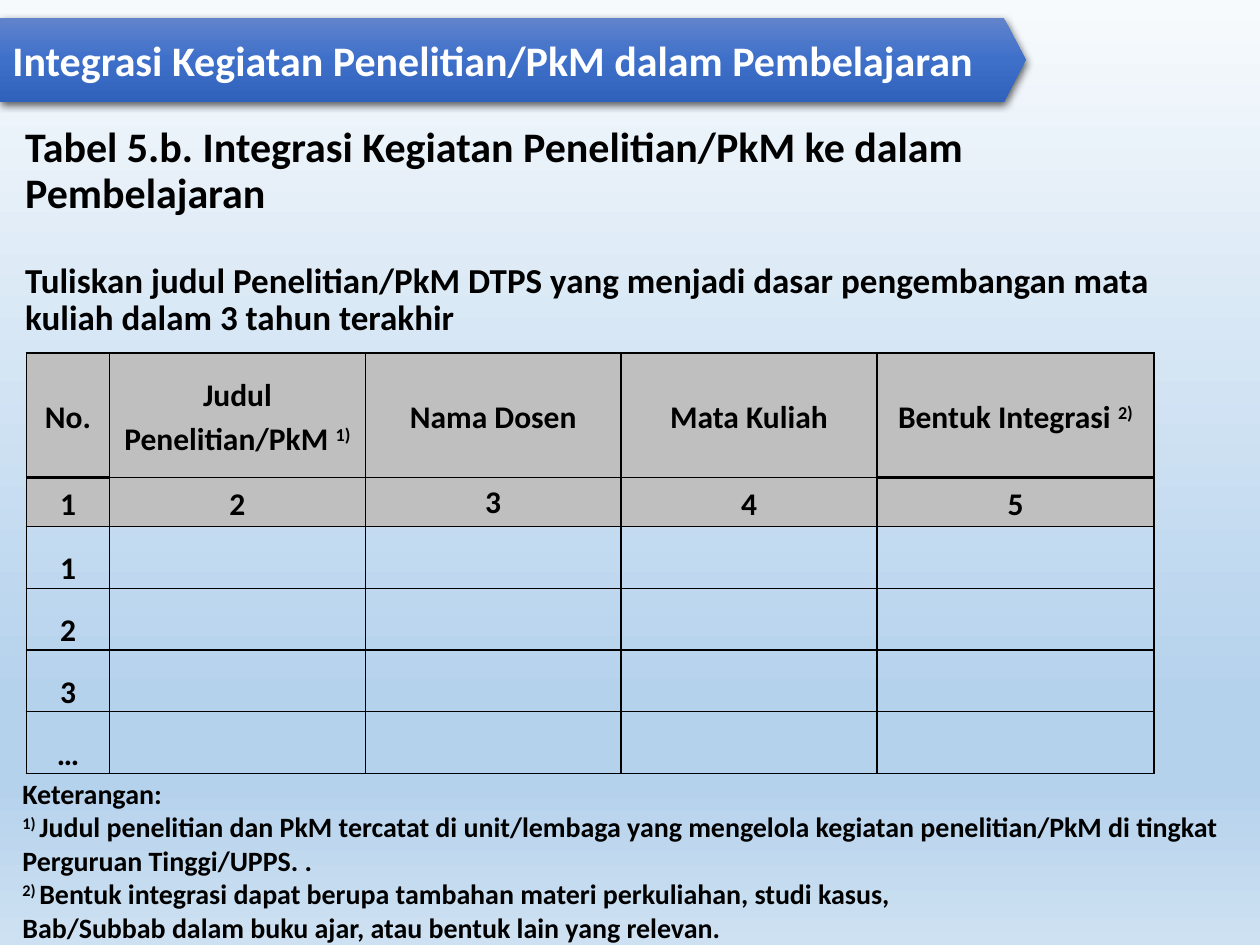
from lxml.etree import SubElement
from pptx import Presentation
from pptx.dml.color import RGBColor
from pptx.enum.shapes import MSO_SHAPE
from pptx.enum.text import MSO_ANCHOR, MSO_AUTO_SIZE, PP_ALIGN
from pptx.oxml.ns import qn
from pptx.util import Inches, Pt

COLUMN_WIDTHS = [0.66, 2.03, 2.03, 2.03, 2.2]
ROW_HEIGHTS = [0.99, 0.39, 0.49, 0.49, 0.49, 0.49]
ROWS = [
    [("No.", ""), ("Judul Penelitian/PkM ", "1)"), ("Nama Dosen", ""),
     ("Mata Kuliah", ""), ("Bentuk Integrasi ", "2)")],
    [(number, "") for number in "12345"],
    [("1", "")],
    [("2", "")],
    [("3", "")],
    [("…", "")],
]
NOTES = [
    ("", "Keterangan:"),
    ("1) ", "Judul penelitian dan PkM tercatat di unit/lembaga yang mengelola "
            "kegiatan penelitian/PkM di tingkat Perguruan Tinggi/UPPS. ."),
    ("2) ", "Bentuk integrasi dapat berupa tambahan materi perkuliahan, studi kasus,"),
    ("", "Bab/Subbab dalam buku ajar, atau bentuk lain yang relevan."),
]


def color(value):
    return RGBColor.from_string(value)


def style(para, size, value="000000"):
    para.font.name = "Calibri"
    para.font.size = Pt(size)
    para.font.bold = True
    para.font.color.rgb = color(value)


def add_span(para, text, raised=False):
    if not text:
        return
    span = para.add_run()
    span.text = text
    if raised:
        span._r.get_or_add_rPr().set("baseline", "30000")


def set_gradient(fill, element, stops):
    fill.gradient()
    fill.gradient_angle = 270
    stop_list = element.find(".//" + qn("a:gsLst"))
    stop_list.clear()
    for position, value in stops:
        stop = SubElement(stop_list, qn("a:gs"), pos=str(position * 1000))
        SubElement(stop, qn("a:srgbClr"), val=value)


def place(shape, box):
    shape.left, shape.top, shape.width, shape.height = map(Inches, box)


def add_shadow(shape):
    shape.shadow.inherit = False
    effects = shape.element.spPr.find(qn("a:effectLst"))
    shadow = SubElement(effects, qn("a:outerShdw"), blurRad=str(Pt(4.5)),
                        dist=str(Pt(1.5)), dir="5400000", rotWithShape="0")
    black = SubElement(shadow, qn("a:srgbClr"), val="000000")
    SubElement(black, qn("a:alpha"), val="63000")


def add_banner(page, box):
    banner = page.shapes.add_shape(MSO_SHAPE.PENTAGON, *map(Inches, box))
    banner.adjustments[0] = 0.26
    set_gradient(banner.fill, banner.element,
                 [(0, "6183CB"), (50, "3E70CA"), (100, "3062BB")])
    banner.line.fill.background()
    add_shadow(banner)
    frame = banner.text_frame
    frame.vertical_anchor = MSO_ANCHOR.MIDDLE
    para = frame.paragraphs[0]
    para.text = "Integrasi Kegiatan Penelitian/PkM dalam Pembelajaran"
    para.alignment = PP_ALIGN.LEFT
    style(para, 24, "FFFFFF")


def fill_title(page, box):
    title = page.shapes.title
    place(title, box)
    frame = title.text_frame
    frame.word_wrap = True
    frame.auto_size = MSO_AUTO_SIZE.NONE
    frame.vertical_anchor = MSO_ANCHOR.MIDDLE
    heading = frame.paragraphs[0]
    heading.text = "Tabel 5.b. Integrasi Kegiatan Penelitian/PkM ke dalam Pembelajaran"
    instruction = frame.add_paragraph()
    instruction.text = ("Tuliskan judul Penelitian/PkM DTPS yang menjadi dasar "
                        "pengembangan mata kuliah dalam 3 tahun terakhir")
    for para, size, gap in [(heading, 24, 0), (instruction, 20, 26)]:
        para.alignment = PP_ALIGN.LEFT
        para.line_spacing = 0.9
        para.space_before = Pt(gap)
        style(para, size)


def set_borders(cell, top, bottom):
    properties = cell._tc.get_or_add_tcPr()
    for side, width in [("L", 1), ("R", 1), ("T", top), ("B", bottom)]:
        line = SubElement(properties, qn("a:ln" + side), w=str(Pt(width)))
        fill = SubElement(line, qn("a:solidFill"))
        SubElement(fill, qn("a:srgbClr"), val="000000")


def fill_cell(cell, text, mark, anchor):
    cell.margin_left = cell.margin_right = Inches(0.07)
    cell.margin_top = cell.margin_bottom = 0
    cell.vertical_anchor = anchor
    para = cell.text_frame.paragraphs[0]
    para.alignment = PP_ALIGN.CENTER
    para.line_spacing = 1.15
    style(para, 18)
    add_span(para, text)
    add_span(para, mark, raised=True)


def add_integration_table(page, box):
    frame = page.shapes.add_table(len(ROW_HEIGHTS), len(COLUMN_WIDTHS),
                                  *map(Inches, box))
    table = frame.table
    table.first_row = table.horz_banding = False
    for column, width in zip(table.columns, COLUMN_WIDTHS):
        column.width = Inches(width)
    for row, height in zip(table.rows, ROW_HEIGHTS):
        row.height = Inches(height)
    for r, texts in enumerate(ROWS):
        for c in range(len(COLUMN_WIDTHS)):
            cell = table.cell(r, c)
            thick = 1.5 if c in (0, len(COLUMN_WIDTHS) - 1) else 1
            set_borders(cell, thick if r == 1 else 1, thick if r == 0 else 1)
            if r < 2:
                cell.fill.solid()
                cell.fill.fore_color.rgb = color("BFBFBF")
            else:
                cell.fill.background()
            if c < len(texts):
                anchor = MSO_ANCHOR.MIDDLE if r < 2 else MSO_ANCHOR.BOTTOM
                if (r, c) == (1, 2):
                    anchor = MSO_ANCHOR.TOP
                fill_cell(cell, *texts[c], anchor)


def add_notes(page, box):
    frame = page.shapes.add_textbox(*map(Inches, box)).text_frame
    frame.word_wrap = True
    for index, (mark, text) in enumerate(NOTES):
        para = frame.add_paragraph() if index else frame.paragraphs[0]
        style(para, 16)
        add_span(para, mark, raised=True)
        add_span(para, text)


def main():
    deck = Presentation()
    deck.slide_width, deck.slide_height = Inches(10), Inches(7.5)
    page = deck.slides.add_slide(deck.slide_layouts[5])
    set_gradient(page.background.fill, page.element,
                 [(0, "F7FAFD"), (74, "B5D2EC"), (83, "B5D2EC"), (100, "CEE1F2")])
    fill_title(page, (0.1, 0.92, 9.52, 1.85))
    add_notes(page, (0.08, 6.11, 9.69, 1.45))
    add_banner(page, (0, 0.14, 8.14, 0.67))
    add_integration_table(page, (0.21, 2.8, sum(COLUMN_WIDTHS), sum(ROW_HEIGHTS)))
    deck.save("out.pptx")


if __name__ == "__main__":
    main()
